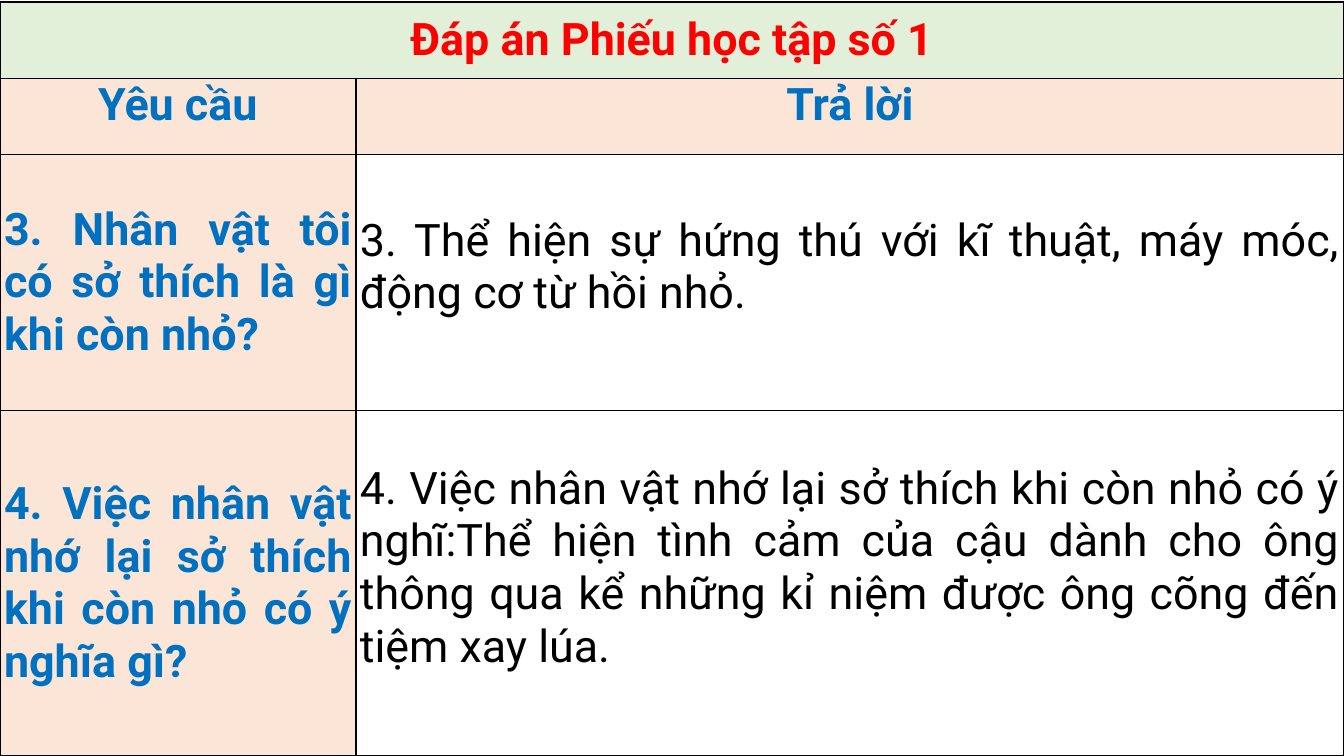
"""Build the answer slide for worksheet number 1."""
from lxml.etree import SubElement
from pptx import Presentation
from pptx.dml.color import RGBColor
from pptx.enum.text import MSO_ANCHOR, PP_ALIGN
from pptx.oxml.ns import qn
from pptx.util import Inches, Pt

COLORS = {
    "red": "FF0000",
    "blue": "0070C0",
    "black": "000000",
    "green_fill": "E2F0D9",
    "peach_fill": "FBE5D6",
    "white": "FFFFFF",
}
COLUMN_WIDTHS = [3.53, 9.8]
ROW_HEIGHTS = [0.76, 0.75, 2.54, 3.43]


def add_borders(cell):
    """Draw a thin black line on all four sides of a cell."""
    properties = cell._tc.get_or_add_tcPr()
    for side in ("a:lnL", "a:lnR", "a:lnT", "a:lnB"):
        line = SubElement(properties, qn(side), w=str(Pt(1)))
        fill = SubElement(line, qn("a:solidFill"))
        SubElement(fill, qn("a:srgbClr"), val=COLORS["black"])


def write_cell(cell, text, color, fill, alignment, anchor, top=0, bold=True):
    """Fill a cell and write its single paragraph."""
    cell.fill.solid()
    cell.fill.fore_color.rgb = RGBColor.from_string(COLORS[fill])
    cell.margin_left = cell.margin_right = Inches(0.04)
    cell.margin_top, cell.margin_bottom = Inches(top), Inches(0)
    cell.vertical_anchor = anchor
    paragraph = cell.text_frame.paragraphs[0]
    paragraph.alignment = alignment
    run = paragraph.add_run()
    run.text = text
    run.font.name = "Roboto"
    run.font.size = Pt(32)
    run.font.bold = bold
    run.font.color.rgb = RGBColor.from_string(COLORS[color])


presentation = Presentation()
presentation.slide_width = Inches(13.33)
presentation.slide_height = Inches(7.5)
slide = presentation.slides.add_slide(presentation.slide_layouts[6])

table = slide.shapes.add_table(
    len(ROW_HEIGHTS), len(COLUMN_WIDTHS),
    Inches(0), Inches(0.02), Inches(sum(COLUMN_WIDTHS)), Inches(sum(ROW_HEIGHTS)),
).table
for column, width in zip(table.columns, COLUMN_WIDTHS):
    column.width = Inches(width)
for row, height in zip(table.rows, ROW_HEIGHTS):
    row.height = Inches(height)
for cell in table.iter_cells():
    add_borders(cell)

table.cell(0, 0).merge(table.cell(0, 1))
write_cell(table.cell(0, 0), "Đáp án Phiếu học tập số 1", "red", "green_fill",
           PP_ALIGN.CENTER, MSO_ANCHOR.MIDDLE)

for column_index, heading in enumerate(["Yêu cầu", "Trả lời"]):
    write_cell(table.cell(1, column_index), heading, "blue", "peach_fill",
               PP_ALIGN.CENTER, MSO_ANCHOR.TOP)

answers = [
    ("3. Nhân vật tôi có sở thích là gì khi còn nhỏ?",
     "3. Thể hiện sự hứng thú với kĩ thuật, máy móc, động cơ từ hồi nhỏ.", 0.6),
    ("4. Việc nhân vật nhớ lại sở thích khi còn nhỏ có ý nghĩa gì?",
     "4. Việc nhân vật nhớ lại sở thích khi còn nhỏ có ý nghĩ:Thể hiện tình cảm "
     "của cậu dành cho ông thông qua kể những kỉ niệm được ông cõng đến tiệm xay lúa.",
     0.52),
]
for row_index, (question, answer, top) in enumerate(answers, start=2):
    write_cell(table.cell(row_index, 0), question, "blue", "peach_fill",
               PP_ALIGN.JUSTIFY, MSO_ANCHOR.MIDDLE)
    write_cell(table.cell(row_index, 1), answer, "black", "white",
               PP_ALIGN.JUSTIFY, MSO_ANCHOR.TOP, top, bold=False)

presentation.save("out.pptx")
